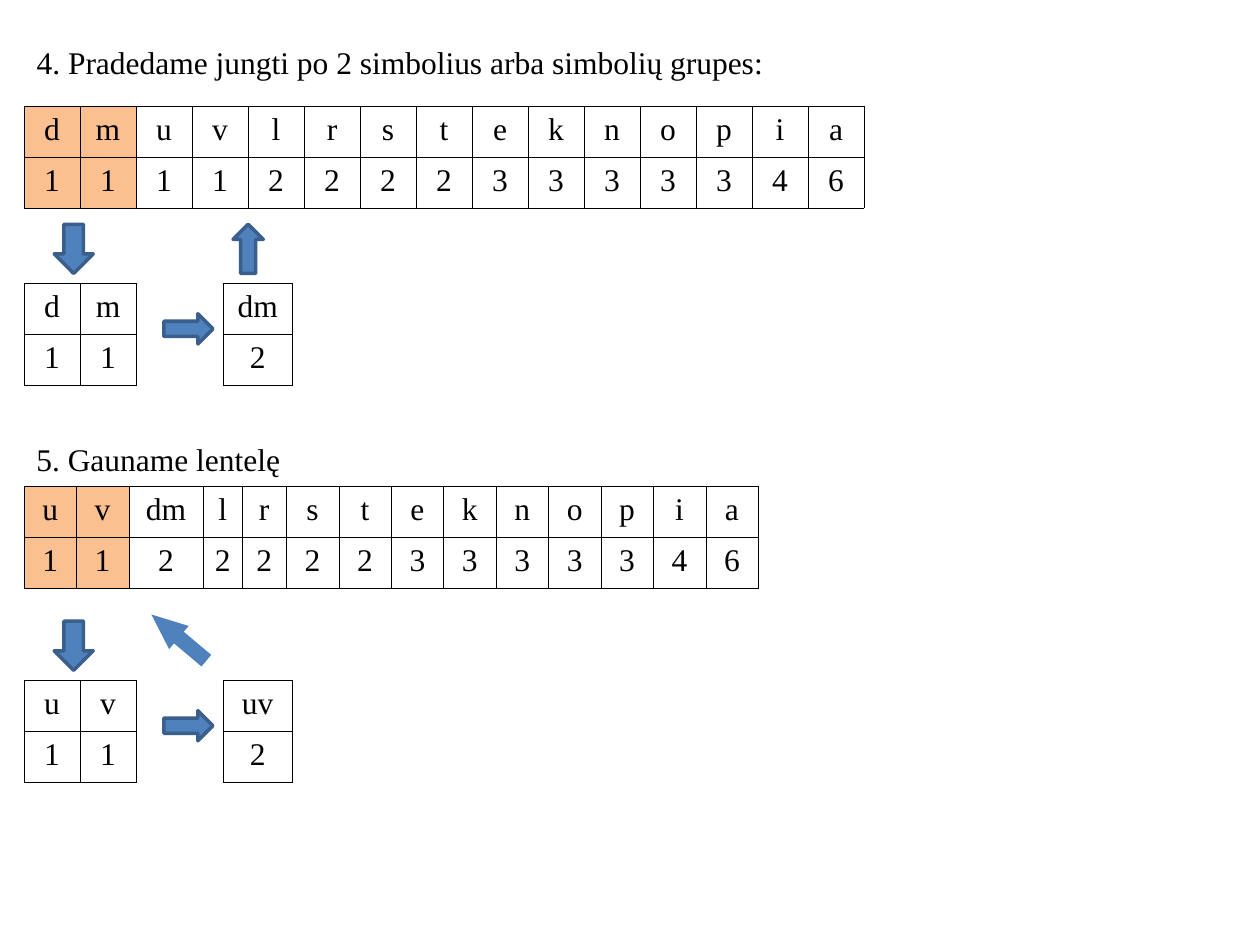
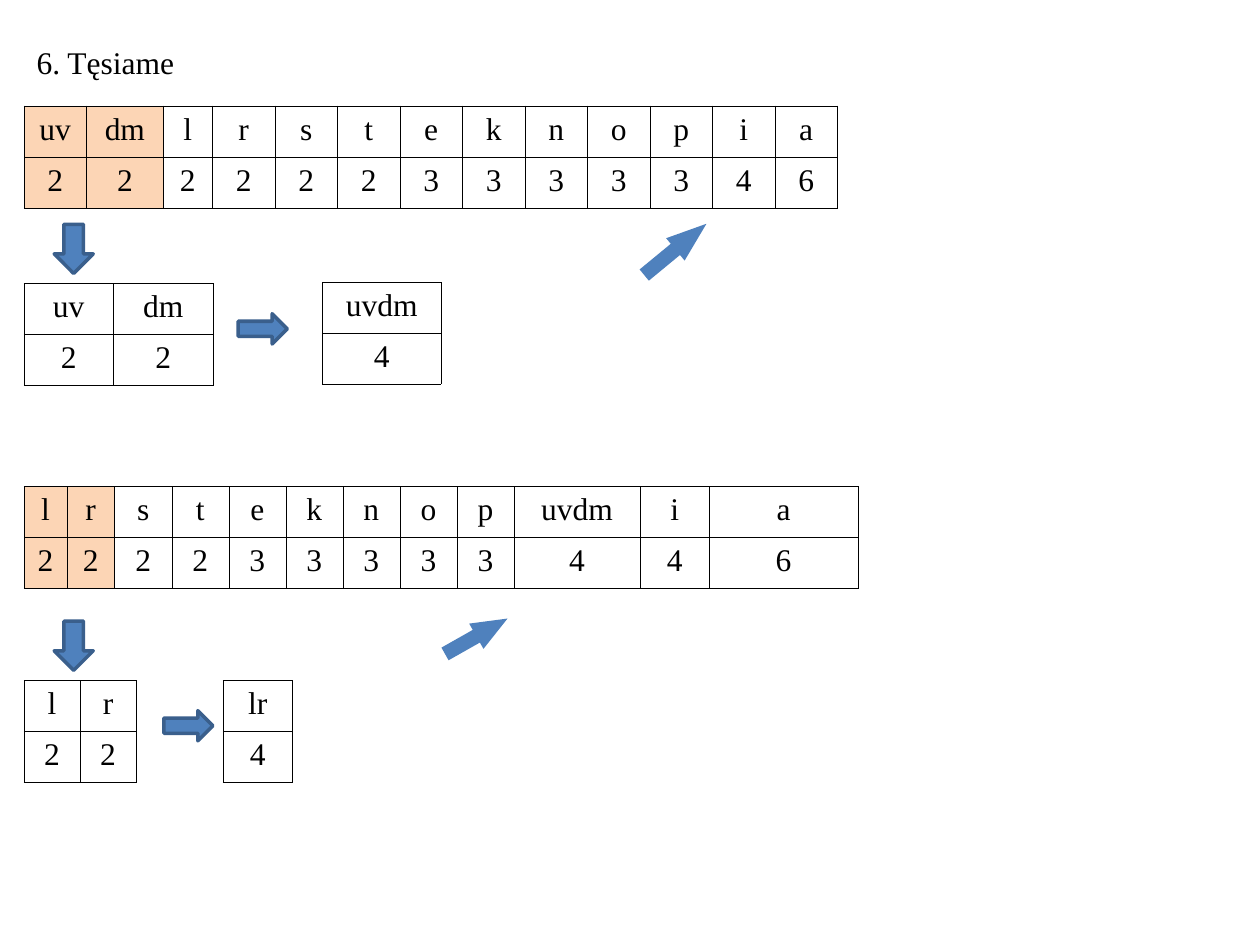
"""Build two slides that join the rarest symbols step by step."""
import lxml.etree
import pptx
import pptx.util
import pptx.dml.color
import pptx.enum.shapes
import pptx.enum.text
import pptx.oxml.ns

SHAPE = pptx.enum.shapes.MSO_SHAPE
ALIGN = pptx.enum.text.PP_ALIGN
FONT = "Times New Roman"
BLACK, WHITE, BLUE, NAVY = "000000", "FFFFFF", "4F81BD", "3A5F8C"
LEFT, TOP, STEP, ROW = 0.19, 0.29, 3.15, 0.405
PAIR, ARROW, SIDE = 1.96, 1.49, 2.2

SLIDES = [
    {"mark": "FAC090", "stages": [
        {"head": "4. Pradedame jungti po 2 simbolius arba simbolių grupes:",
         "names": "d m u v l r s t e k n o p i a",
         "counts": "1 1 1 1 2 2 2 2 3 3 3 3 3 4 6",
         "width": 6.67, "own": {}, "drop": 0.55,
         "pair": (0.89, {}), "side": 1.3, "sum": (1.77, 0.55, PAIR),
         "back": (1.97, 1.975, 0.24, 0.39, 0)},
        {"head": "5. Gauname lentelę",
         "names": "u v dm l r s t e k n o p i a",
         "counts": "1 1 2 2 2 2 2 3 3 3 3 3 4 6",
         "width": 5.83, "own": {"dm": 0.59, "l": 0.31, "r": 0.35}, "drop": 0.42,
         "pair": (0.89, {}), "side": 1.3, "sum": (1.77, 0.55, PAIR),
         "back": (1.42, 5.06, 0.24, 0.57, -50)}]},
    {"mark": "FCD5B5", "stages": [
        {"head": "6. Tęsiame",
         "names": "uv dm l r s t e k n o p i a",
         "counts": "2 2 2 2 2 2 3 3 3 3 3 4 6",
         "width": 6.46, "own": {"dm": 0.61, "l": 0.39}, "drop": 0.55,
         "pair": (1.5, {"dm": 0.79}), "side": 1.89, "sum": (2.56, 0.94, 1.95),
         "back": (5.36, 1.98, 0.23, 0.64, 50.5)},
        {"head": "",
         "names": "l r s t e k n o p uvdm i a",
         "counts": "2 2 2 2 3 3 3 3 3 4 4 6",
         "width": 6.62, "drop": 0.42,
         "own": {"l": 0.34, "r": 0.38, "uvdm": 1, "i": 0.55, "a": 1.18},
         "pair": (0.89, {}), "side": 1.3, "sum": (1.77, 0.55, PAIR),
         "back": (3.78, 5.05, 0.23, 0.57, 60.5)}]},
]


def inch(*nums):
    return [pptx.util.Inches(num) for num in nums]


def color(code):
    return pptx.dml.color.RGBColor.from_string(code)


def write(frame, text, size=18, ink=BLACK, align=ALIGN.LEFT):
    par = frame.paragraphs[0]
    par.alignment = align
    run = par.add_run()
    run.text = text
    run.font.size = pptx.util.Pt(size)
    run.font.name = FONT
    run.font.color.rgb = color(ink)


def head(slide, text, top, title):
    box = slide.shapes.title if title else slide.shapes.add_textbox(0, 0, 0, 0)
    box.left, box.top, box.width, box.height = inch(LEFT, top, 9.06, 0.4)
    frame = box.text_frame
    frame.word_wrap = True
    frame.vertical_anchor = pptx.enum.text.MSO_ANCHOR.TOP
    frame.auto_size = pptx.enum.text.MSO_AUTO_SIZE.SHAPE_TO_FIT_TEXT
    write(frame, text)


def edge(cell):
    props = cell._tc.get_or_add_tcPr()
    for side in ("lnL", "lnR", "lnT", "lnB"):
        line = lxml.etree.SubElement(props, pptx.oxml.ns.qn("a:" + side), w="3175")
        fill = lxml.etree.SubElement(line, pptx.oxml.ns.qn("a:solidFill"))
        lxml.etree.SubElement(fill, pptx.oxml.ns.qn("a:srgbClr"), val=BLACK)


def grid(slide, left, top, width, rows, own={}, mark=WHITE):
    names = rows[0]
    rest = (width - sum(own.values())) / max(1, len(names) - len(own))
    frame = slide.shapes.add_table(2, len(names), *inch(left, top, width, 2 * ROW))
    table = frame.table
    table.first_row = table.horz_banding = False
    for col, name in zip(table.columns, names):
        col.width = pptx.util.Inches(own.get(name, rest))
    for r, texts in enumerate(rows):
        table.rows[r].height = pptx.util.Inches(ROW)
        for c, text in enumerate(texts):
            cell = table.cell(r, c)
            cell.margin_left = cell.margin_right = pptx.util.Inches(0.05)
            edge(cell)
            cell.fill.solid()
            cell.fill.fore_color.rgb = color(mark if c < 2 else WHITE)
            write(cell.text_frame, text, align=ALIGN.CENTER)


def arrow(slide, kind, left, top, width, height, turn=0):
    shape = slide.shapes.add_shape(kind, *inch(left, top, width, height))
    shape.shadow.inherit = False
    shape.fill.solid()
    shape.fill.fore_color.rgb = color(BLUE)
    if turn:
        shape.rotation = turn
        shape.adjustments[1] = height / width / 2
        shape.line.fill.background()
    else:
        shape.line.color.rgb = color(NAVY)
        shape.line.width = pptx.util.Pt(2)


def stage(slide, data, top, mark, title):
    if data["head"]:
        head(slide, data["head"], top, title)
    names, counts = data["names"].split(), data["counts"].split()
    grid(slide, LEFT, top + data["drop"], data["width"], (names, counts),
         data["own"], mark)
    width, own = data["pair"]
    grid(slide, LEFT, top + PAIR, width, (names[:2], counts[:2]), own)
    arrow(slide, SHAPE.DOWN_ARROW, 0.43, top + ARROW, 0.31, 0.39)
    left, width, drop = data["sum"]
    total = str(sum(map(int, counts[:2])))
    joined = "".join(names[:2])
    grid(slide, left, top + drop, width, ([joined], [total]))
    arrow(slide, SHAPE.RIGHT_ARROW, data["side"], top + SIDE, 0.39, 0.24)
    x, y, wide, long, turn = data["back"]
    arrow(slide, SHAPE.UP_ARROW, x - wide / 2, y - long / 2, wide, long, turn)


def main():
    deck = pptx.Presentation()
    deck.slide_width, deck.slide_height = inch(10, 7.5)
    for page in SLIDES:
        slide = deck.slides.add_slide(deck.slide_layouts[5])
        for n, data in enumerate(page["stages"]):
            stage(slide, data, TOP + n * STEP, page["mark"], n == 0)
    deck.save("out.pptx")


if __name__ == "__main__":
    main()
